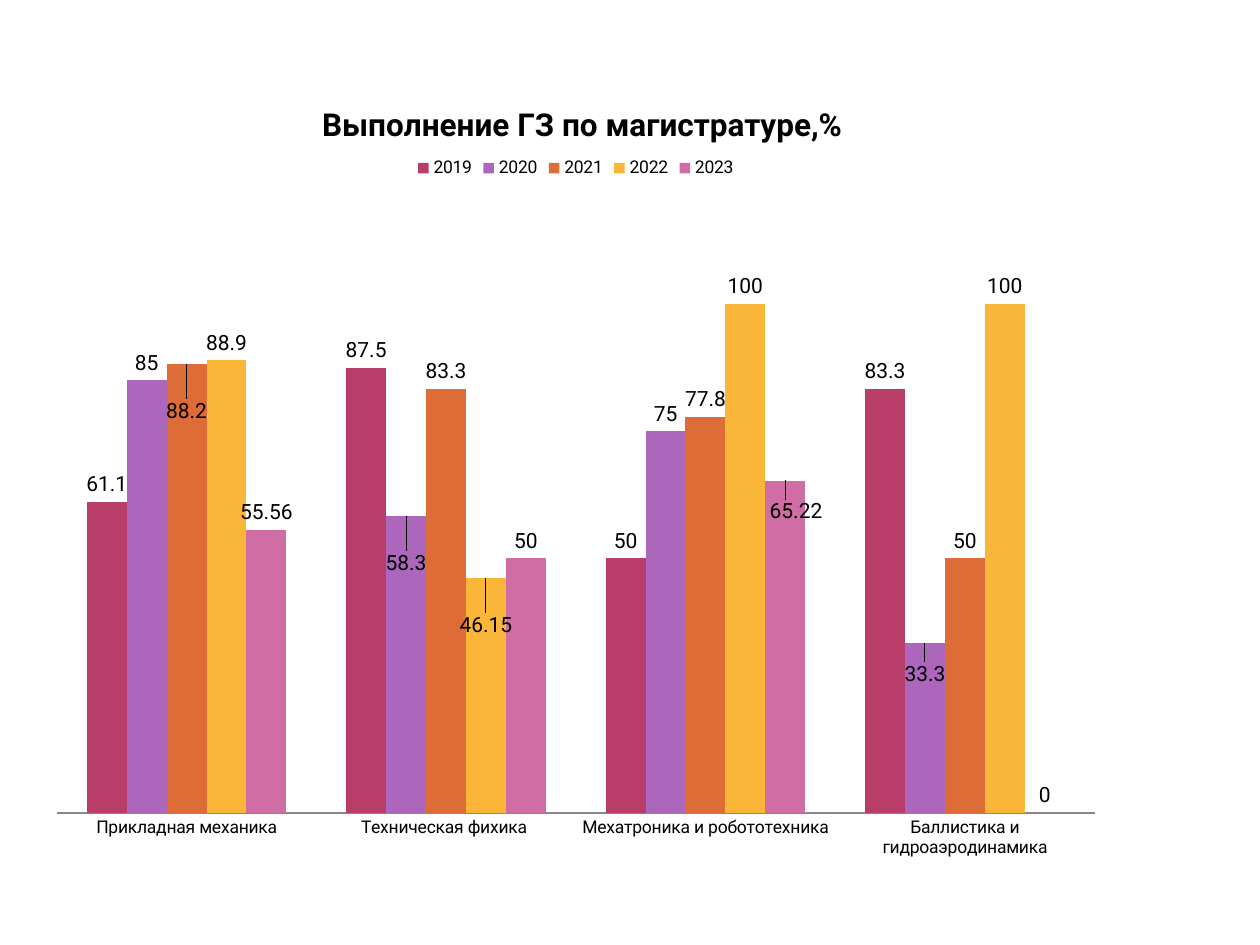
import pptx
import pptx.util
import pptx.chart.data
import pptx.dml.color
import pptx.enum.chart
import pptx.oxml
import pptx.oxml.ns

Inches = pptx.util.Inches
Pt = pptx.util.Pt
RGBColor = pptx.dml.color.RGBColor
qn = pptx.oxml.ns.qn

BLACK = RGBColor(0x00, 0x00, 0x00)
GRAY = RGBColor(0x87, 0x87, 0x87)
BERRY = RGBColor(0xB8, 0x3D, 0x68)
PURPLE = RGBColor(0xAC, 0x66, 0xBB)
ORANGE = RGBColor(0xDE, 0x6C, 0x36)
YELLOW = RGBColor(0xF9, 0xB6, 0x39)
PINK = RGBColor(0xCF, 0x6D, 0xA4)

CATEGORIES = ["Прикладная механика", "Техническая фихика ",
              "Мехатроника и робототехника", "Баллистика и гидроаэродинамика"]
SERIES = [
    ("2019", [61.1, 87.5, 50, 83.3], BERRY, {}),
    ("2020", [85, 58.3, 75, 33.3], PURPLE, {1: (0, 0.08), 3: (0, 0.06)}),
    ("2021", [88.2, 83.3, 77.8, 50], ORANGE, {0: (0, 0.08)}),
    ("2022", [88.9, 46.15, 100, 100], YELLOW, {1: (0, 0.08)}),
    ("2023", [55.56, 50, 65.22, 0], PINK, {2: (0.01, 0.06)}),
]


def set_layout(parent, before, **values):
    for old in parent.findall(qn("c:layout")):
        parent.remove(old)
    items = "".join(f'<c:{k} val="{v}"/>' for k, v in values.items())
    layout = pptx.oxml.parse_xml(
        f'<c:layout {pptx.oxml.ns.nsdecls("c")}><c:manualLayout>{items}'
        '</c:manualLayout></c:layout>')
    if before is None:
        parent.insert(0, layout)
    else:
        parent.find(qn(before)).addnext(layout)


def set_font(font, size, bold=False):
    font.name = "Roboto"
    font.size = Pt(size)
    font.bold = bold
    font.color.rgb = BLACK


prs = pptx.Presentation()
prs.slide_width = Inches(10)
prs.slide_height = Inches(7.5)
s = prs.slides.add_slide(prs.slide_layouts[6])

data = pptx.chart.data.CategoryChartData()
data.categories = CATEGORIES
for name, values, color, moved in SERIES:
    data.add_series(name, values)
chart = s.shapes.add_chart(
    pptx.enum.chart.XL_CHART_TYPE.COLUMN_CLUSTERED,
    Inches(0.28), Inches(0.52), Inches(8.58), Inches(6.38), data).chart
set_font(chart.font, 10)

chart.has_title = True
title = chart.chart_title
p = title.text_frame.paragraphs[0]
p.text = "Выполнение ГЗ по магистратуре,%"
set_font(p.font, 18, True)
title.include_in_layout = False
set_layout(title._element, "c:tx", xMode="edge", yMode="edge", x=0.26, y=0.04)

chart.has_legend = True
legend = chart.legend
legend.position = pptx.enum.chart.XL_LEGEND_POSITION.TOP
legend.include_in_layout = False
set_font(legend.font, 10)

cat_axis = chart.category_axis
cat_axis.major_tick_mark = pptx.enum.chart.XL_TICK_MARK.NONE
cat_axis.format.line.color.rgb = GRAY
cat_axis.format.line.width = Pt(1)
set_font(cat_axis.tick_labels.font, 10)
val_axis = chart.value_axis
val_axis.minimum_scale = 0
val_axis.maximum_scale = 120
val_axis.has_major_gridlines = False
val_axis.visible = False

plot = chart.plots[0]
plot.gap_width = 150
plot.overlap = 0
plot.vary_by_categories = False
plot_area = chart._chartSpace.chart.plotArea
set_layout(plot_area, None, layoutTarget="inner", xMode="edge", yMode="edge",
           x=0.02, y=0.17, w=0.96, h=0.76)

OUTSIDE = pptx.enum.chart.XL_LABEL_POSITION.OUTSIDE_END
for series, (name, values, color, moved) in zip(plot.series, SERIES):
    series.format.fill.solid()
    series.format.fill.fore_color.rgb = color
    series.invert_if_negative = False
    labels = series.data_labels
    labels.show_value = True
    labels.number_format = "General"
    labels.number_format_is_linked = False
    labels.position = OUTSIDE
    set_font(labels.font, 12)
    for i, (x, y) in moved.items():
        label = series.points[i].data_label
        label.position = OUTSIDE
        set_font(label.font, 12)
    for label in labels._element.findall(qn("c:dLbl")):
        x, y = moved[int(label.find(qn("c:idx")).get("val"))]
        set_layout(label, "c:idx", x=x, y=y)

prs.save("out.pptx")
